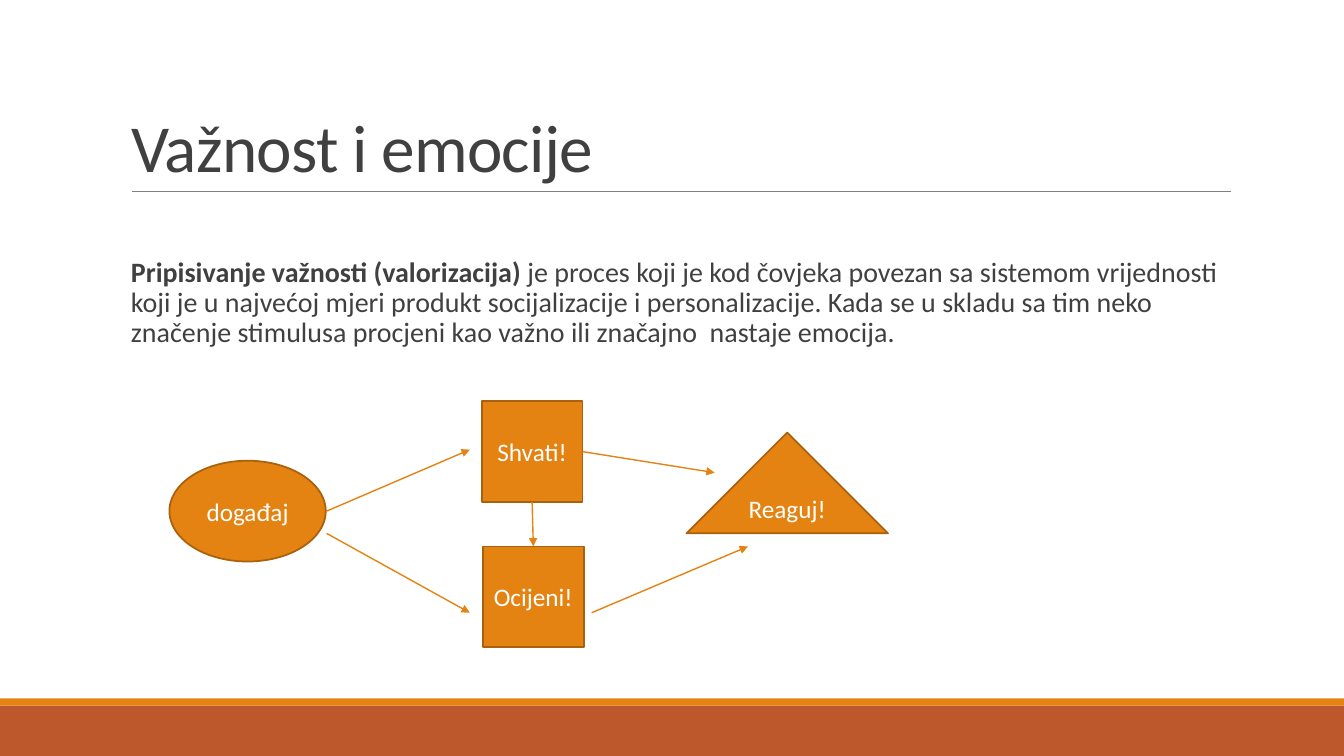
from typing import NamedTuple

from lxml import etree
from pptx import Presentation
from pptx.dml.color import RGBColor
from pptx.enum import shapes as es, text as et
from pptx.oxml import ns
from pptx.util import Cm, Pt

ORANGE = RGBColor(0xE4, 0x83, 0x12)
BROWN = RGBColor(0xA9, 0x61, 0x0D)
RUST = RGBColor(0xBD, 0x58, 0x2C)
DARK = RGBColor(0x40, 0x40, 0x40)
GRAY = RGBColor(0x80, 0x80, 0x80)
WHITE = RGBColor(0xFF, 0xFF, 0xFF)
FONT = "Calibri"
WIDE, HIGH = 33.87, 19.05
SIDE = 2.54
KIND = es.MSO_SHAPE


class Node(NamedTuple):
    label: str
    kind: es.MSO_SHAPE
    left: float
    top: float
    width: float = SIDE


class Arrow(NamedTuple):
    x1: float
    y1: float
    x2: float
    y2: float


class Band(NamedTuple):
    top: float
    height: float
    color: RGBColor


NODES = [
    Node("događaj", KIND.OVAL, 4.27, 11.61, 3.94),
    Node("Shvati!", KIND.RECTANGLE, 12.14, 10.11),
    Node("Ocijeni!", KIND.RECTANGLE, 12.17, 13.77),
    Node("Reaguj!", KIND.ISOSCELES_TRIANGLE, 17.3, 10.9, 2 * SIDE),
]
ARROWS = [
    Arrow(8.23, 12.88, 11.84, 11.33),
    Arrow(8.23, 13.44, 11.84, 15.44),
    Arrow(13.41, 12.65, 13.44, 13.77),
    Arrow(14.68, 11.38, 18.01, 11.91),
    Arrow(14.91, 15.44, 18.85, 13.77),
]
BANDS = [Band(17.78, 1.27, RUST), Band(17.6, 0.18, ORANGE)]
LEAD = "Pripisivanje važnosti (valorizacija) "
BODY = (
    "je proces koji je kod čovjeka povezan sa sistemom vrijednosti "
    "koji je u najvećoj mjeri produkt socijalizacije i personalizacije. "
    "Kada se u skladu sa tim neko značenje stimulusa procjeni kao važno "
    "ili značajno  nastaje emocija."
)


def write(shape, *parts: str, size: float, color: RGBColor,
          align=et.PP_ALIGN.LEFT, anchor=et.MSO_ANCHOR.TOP,
          space: float = 1.0, track: int = 0, lead: bool = False) -> None:
    frame = shape.text_frame
    frame.word_wrap = True
    frame.auto_size = et.MSO_AUTO_SIZE.NONE
    frame.vertical_anchor = anchor
    para = frame.paragraphs[0]
    para.alignment = align
    para.line_spacing = space
    for index, part in enumerate(parts):
        run = para.add_run()
        run.text = part
        run.font.name = FONT
        run.font.size = Pt(size)
        run.font.color.rgb = color
        run.font.bold = lead and index == 0
        if track:
            run.font._element.set("spc", str(track))


def block(slide, kind, left: float, top: float, width: float,
          height: float, fill: RGBColor):
    shape = slide.shapes.add_shape(
        kind, Cm(left), Cm(top), Cm(width), Cm(height))
    shape.shadow.inherit = False
    shape.fill.solid()
    shape.fill.fore_color.rgb = fill
    shape.line.fill.background()
    return shape


def link(slide, path: Arrow, color: RGBColor, width: float,
         head: bool = True) -> None:
    line = slide.shapes.add_connector(
        es.MSO_CONNECTOR.STRAIGHT, *(Cm(value) for value in path))
    line.line.color.rgb = color
    line.line.width = Pt(width)
    if head:
        etree.SubElement(line.line._get_or_add_ln(),
                         ns.qn("a:tailEnd"), type="triangle")
    etree.SubElement(line._element.spPr, ns.qn("a:effectLst"))


def node(slide, item: Node) -> None:
    shape = block(slide, item.kind, item.left, item.top,
                  item.width, SIDE, ORANGE)
    shape.line.color.rgb = BROWN
    shape.line.width = Pt(1.25)
    write(shape, item.label, size=18, color=WHITE,
          align=et.PP_ALIGN.CENTER, anchor=et.MSO_ANCHOR.MIDDLE)


def main() -> None:
    deck = Presentation()
    deck.slide_width, deck.slide_height = Cm(WIDE), Cm(HIGH)
    slide = deck.slides.add_slide(deck.slide_layouts[5])

    for band in BANDS:
        block(slide, KIND.RECTANGLE, 0, band.top, WIDE,
              band.height, band.color)
    link(slide, Arrow(3.33, 4.83, 31.01, 4.83), GRAY, 0.5, head=False)

    title = slide.shapes.title
    title.left, title.top = Cm(3.05), Cm(0.79)
    title.width, title.height = Cm(27.94), Cm(4.04)
    write(title, "Važnost i emocije", size=48, color=DARK,
          anchor=et.MSO_ANCHOR.BOTTOM, space=0.85, track=-50)

    body = slide.shapes.add_textbox(Cm(3.3), Cm(6.5), Cm(27.69), Cm(2.6))
    frame = body.text_frame
    frame.margin_left = frame.margin_right = 0
    frame.margin_top = frame.margin_bottom = 0
    write(body, LEAD, BODY, size=20, color=DARK, space=0.9, lead=True)

    for item in NODES:
        node(slide, item)
    for arrow in ARROWS:
        link(slide, arrow, ORANGE, 1)
    deck.save("out.pptx")


if __name__ == "__main__":
    main()
